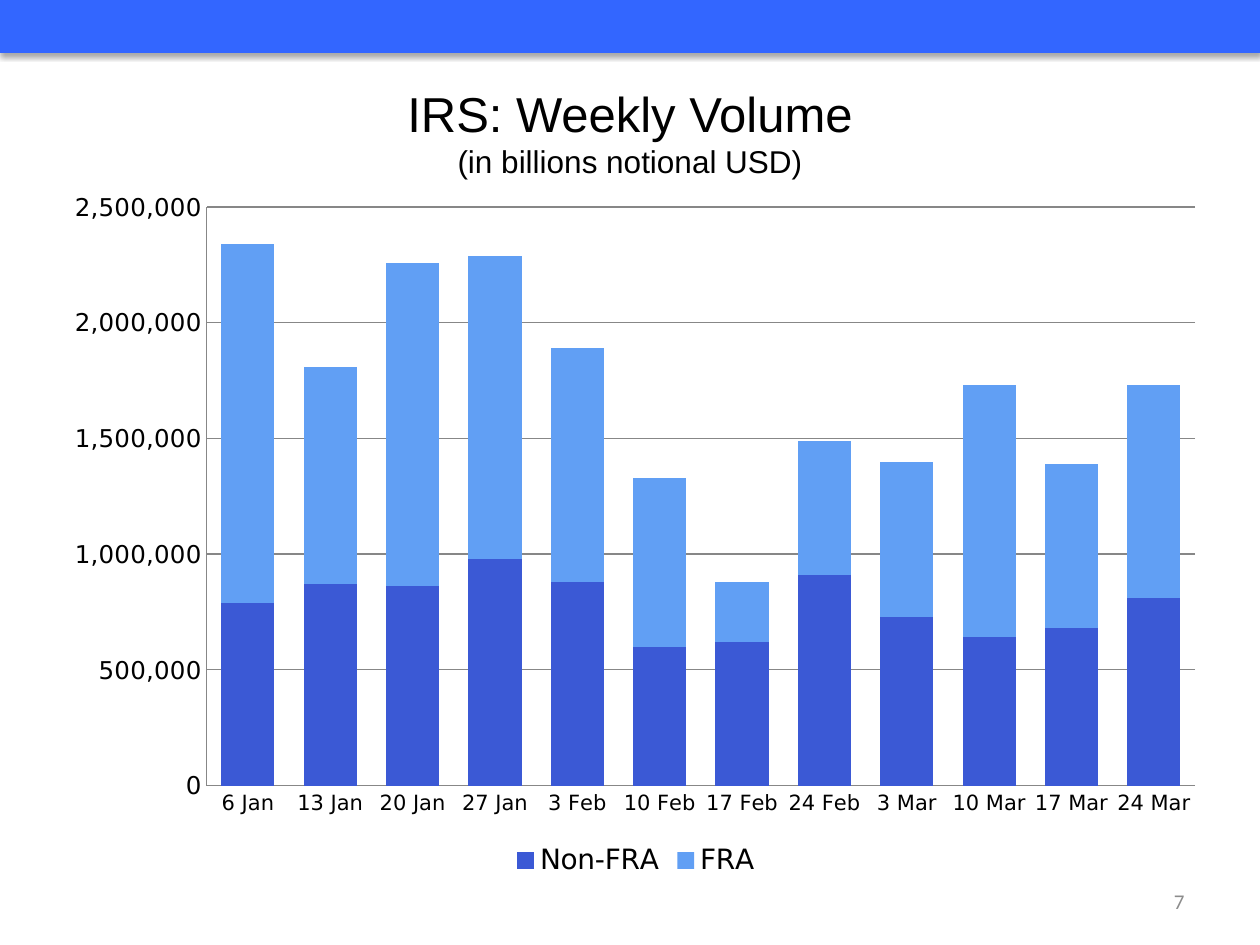
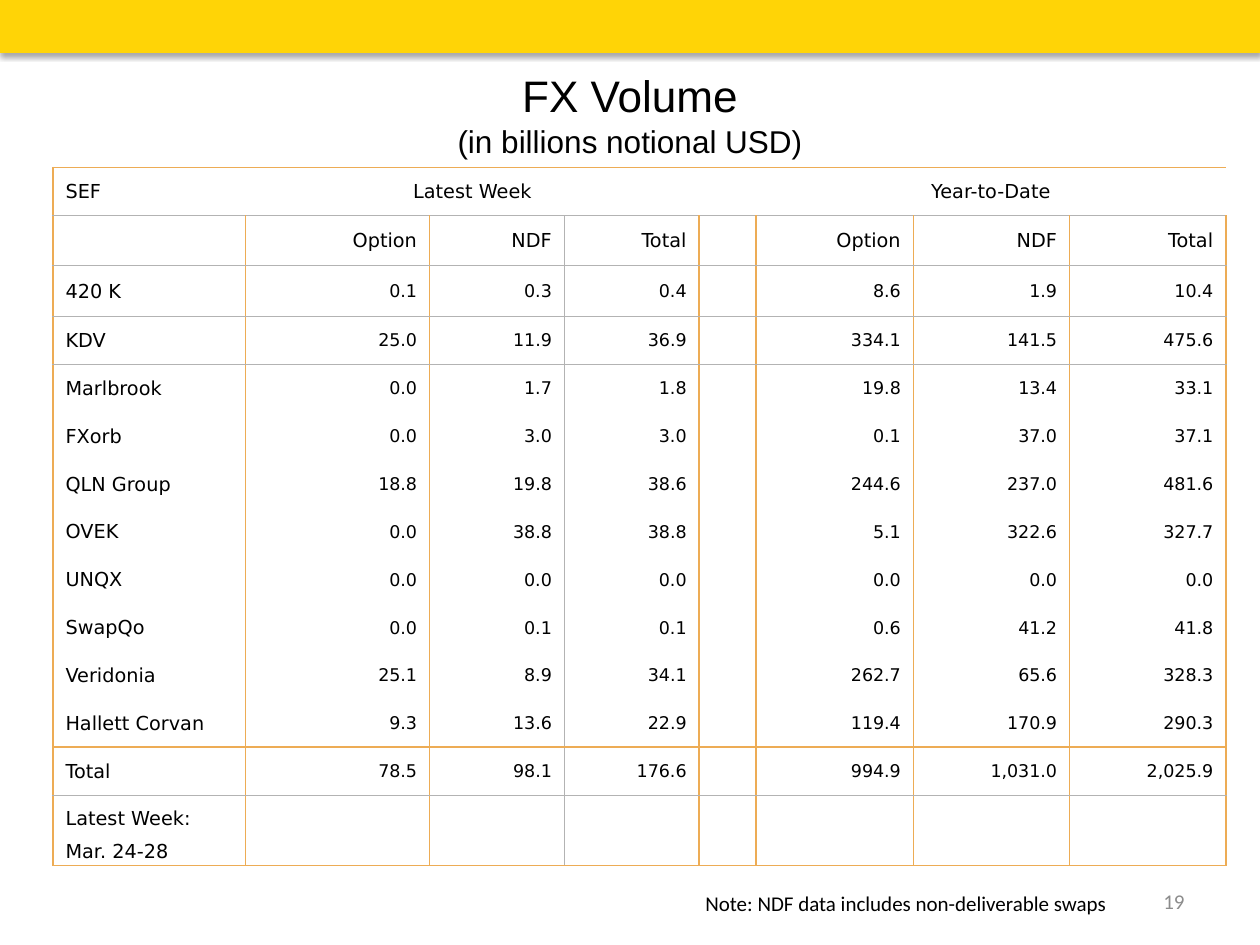
import dataclasses

import lxml.etree
import pptx
import pptx.chart.data
import pptx.dml.color
import pptx.enum.chart
import pptx.enum.shapes
import pptx.enum.text
import pptx.oxml
import pptx.oxml.ns
import pptx.util

Inches, Pt, qn = pptx.util.Inches, pptx.util.Pt, pptx.oxml.ns.qn
RGB = pptx.dml.color.RGBColor.from_string
ALIGN, ANCHOR = pptx.enum.text.PP_ALIGN, pptx.enum.text.MSO_ANCHOR
NS = pptx.oxml.ns.nsdecls("a", "c")
NO_GRID_STYLE = "{2D5ABB26-0587-4C30-8999-92F81FD0307C}"


@dataclasses.dataclass(frozen=True)
class Theme:
    blue: str = "3366FF"
    yellow: str = "FFD406"
    black: str = "000000"
    number_grey: str = "8C8C8C"
    grid_grey: str = "878787"
    rule_orange: str = "EDAC55"
    rule_grey: str = "B3B3B3"
    non_fra: str = "3B59D5"
    fra: str = "619FF4"
    title_font: str = "Arial"
    data_font: str = "DejaVu Sans"
    note_font: str = "Calibri"
    title: float = 28
    title_small: float = 25.2
    subtitle: float = 18
    legend: float = 16
    value_axis: float = 14
    category_axis: float = 12
    note: float = 12
    label: float = 11
    figure: float = 10


T = Theme()


def set_font(font, name, size, color=T.black):
    font.name, font.size, font.bold = name, Pt(size), False
    font.color.rgb = RGB(color)


def write(p, text, *, size, font, color=T.black, align=ALIGN.LEFT,
          after=None, spacing=None):
    """Add one formatted run to a paragraph."""
    r = p.add_run()
    r.text = text
    set_font(r.font, font, size, color)
    p.alignment = align
    if after is not None:
        p.space_after = Pt(after)
    if spacing:
        p.line_spacing = spacing


def set_border(cell, side, color, width):
    """Draw one side (L, R, T or B) of a table cell."""
    tcPr = cell._tc.get_or_add_tcPr()
    line = pptx.oxml.parse_xml(
        f'<a:ln{side} {NS} w="{Pt(width)}"><a:solidFill>'
        f'<a:srgbClr val="{color}"/></a:solidFill></a:ln{side}>')
    # Borders come in a fixed order, ahead of the fill
    order = [qn(f"a:ln{x}") for x in "LRTB"]
    before = order[:order.index(line.tag)]
    tcPr.insert(sum(child.tag in before for child in tcPr), line)


class Deck:
    def __init__(self, theme):
        self.t = theme
        self.prs = pptx.Presentation()
        self.prs.slide_width, self.prs.slide_height = Inches(10), Inches(7.5)
        self.s = None

    def new_slide(self):
        self.s = self.prs.slides.add_slide(self.prs.slide_layouts[6])

    def text_box(self, left, top, width, height):
        tf = self.s.shapes.add_textbox(
            Inches(left), Inches(top), Inches(width), Inches(height)).text_frame
        tf.word_wrap = True
        tf.vertical_anchor = ANCHOR.MIDDLE
        return tf.paragraphs[0]

    def title(self, title, subtitle, top, height, size):
        p = self.text_box(0.5, top, 9, height)
        style = dict(font=self.t.title_font, align=ALIGN.CENTER)
        write(p, title, size=size, **style)
        p.add_line_break()
        write(p, subtitle, size=self.t.subtitle, **style)

    def band(self, color):
        sp = self.s.shapes.add_shape(
            pptx.enum.shapes.MSO_SHAPE.RECTANGLE, 0, 0,
            self.prs.slide_width, Inches(0.42))
        sp.fill.solid()
        sp.fill.fore_color.rgb = RGB(color)
        sp.line.fill.background()
        sp.shadow.inherit = False
        effects = sp._element.spPr.find(qn("a:effectLst"))
        effects.append(pptx.oxml.parse_xml(
            f'<a:outerShdw {NS} blurRad="{Pt(3.1)}" dist="{Pt(1.8)}" '
            'dir="5400000" rotWithShape="0"><a:srgbClr val="000000">'
            '<a:alpha val="35000"/></a:srgbClr></a:outerShdw>'))

    def page_number(self, number):
        write(self.text_box(7.17, 6.95, 2.33, 0.4), str(number),
              size=self.t.note, font=self.t.note_font,
              color=self.t.number_grey, align=ALIGN.RIGHT)

    def note(self, text):
        write(self.text_box(5.5, 6.85, 3.67, 0.64), text,
              size=self.t.note, font=self.t.note_font)

    def stacked_chart(self, categories, series, maximum, step):
        t = self.t
        data = pptx.chart.data.CategoryChartData(number_format="#,##0")
        data.categories = categories
        for name, values, _ in series:
            data.add_series(name, values)
        chart = self.s.shapes.add_chart(
            pptx.enum.chart.XL_CHART_TYPE.COLUMN_STACKED, Inches(0.42),
            Inches(1.42), Inches(9.25), Inches(5.58), data).chart
        set_font(chart.font, t.data_font, t.legend)
        chart.has_title = False

        # Legend and columns
        chart.has_legend = True
        chart.legend.position = pptx.enum.chart.XL_LEGEND_POSITION.BOTTOM
        chart.legend.include_in_layout = False
        set_font(chart.legend.font, t.data_font, t.legend)
        plot = chart.plots[0]
        plot.gap_width, plot.overlap = 55, 100
        plot.vary_by_categories = False
        for column, (_, _, color) in zip(plot.series, series):
            column.format.fill.solid()
            column.format.fill.fore_color.rgb = RGB(color)

        # Axes
        axes = ((chart.category_axis, t.category_axis),
                (chart.value_axis, t.value_axis))
        for axis, size in axes:
            axis.major_tick_mark = pptx.enum.chart.XL_TICK_MARK.NONE
            axis.minor_tick_mark = pptx.enum.chart.XL_TICK_MARK.NONE
            axis.format.line.color.rgb = RGB(t.grid_grey)
            set_font(axis.tick_labels.font, t.data_font, size)
        axis = chart.value_axis
        axis.minimum_scale, axis.maximum_scale = 0, maximum
        axis.major_unit = step
        axis.has_major_gridlines = True
        axis.major_gridlines.format.line.color.rgb = RGB(t.grid_grey)
        axis.tick_labels.number_format = "#,##0"
        axis.tick_labels.number_format_is_linked = False

        # Clear background and fixed plot area
        root = chart._chartSpace
        root.find(qn("c:txPr")).addprevious(pptx.oxml.parse_xml(
            f'<c:spPr {NS}><a:noFill/><a:ln><a:noFill/></a:ln></c:spPr>'))
        area = root.chart.plotArea
        for layout in area.findall(qn("c:layout")):
            area.remove(layout)
        edges = "".join(f'<c:{k} val="{v}"/>' for k, v in (
            ("layoutTarget", "inner"), ("xMode", "edge"), ("yMode", "edge"),
            ("x", 0.132), ("y", 0.04), ("w", 0.848), ("h", 0.823)))
        area.insert(0, pptx.oxml.parse_xml(
            f'<c:layout {NS}><c:manualLayout>{edges}</c:manualLayout></c:layout>'))

    def table(self, rows, widths, heights):
        frame = self.s.shapes.add_table(
            len(rows), len(widths), Inches(0.42), Inches(1.33),
            Inches(sum(widths)), Inches(sum(heights)))
        table = frame.table
        table.first_row = table.horz_banding = False
        table._tbl.tblPr.find(qn("a:tableStyleId")).text = NO_GRID_STYLE
        for column, width in zip(table.columns, widths):
            column.width = Inches(width)
        for row, height in zip(table.rows, heights):
            row.height = Inches(height)
        for i, row in enumerate(rows):
            for j, text in enumerate(row):
                self.cell(table.cell(i, j), text, i, j, len(rows) - 1)
        return table

    def cell(self, cell, text, i, j, last):
        t = self.t
        cell.fill.background()
        cell.vertical_anchor = ANCHOR.TOP if i == last else ANCHOR.MIDDLE
        cell.margin_left = cell.margin_right = Inches(0.1)
        cell.margin_top, cell.margin_bottom = Inches(0.01), 0
        if i == 0:
            align = ALIGN.CENTER if j else ALIGN.LEFT
        else:
            align = ALIGN.RIGHT if j else ALIGN.LEFT
        size = t.figure if j and i > 1 else t.label
        for k, line in enumerate(text.split("\n") if text else []):
            tf = cell.text_frame
            p = tf.add_paragraph() if k else tf.paragraphs[0]
            write(p, line, size=size, font=t.data_font, align=align,
                  after=6 if i == 1 else None,
                  spacing=1.5 if i == last else None)

    def rule_table(self, table, grey_rows, orange_rows, grey_columns):
        """Rule the grid; edges are numbered from the top and the left."""
        orange, grey = (self.t.rule_orange, 1), (self.t.rule_grey, 0.5)
        last_column = len(table.columns) - 1
        for i in range(len(table.rows)):
            for j in range(last_column + 1):
                cell = table.cell(i, j)
                for side, edge in (("L", j), ("R", j + 1)):
                    if i or edge in (0, last_column + 1):
                        set_border(cell, side,
                                   *(grey if edge in grey_columns else orange))
                for side, edge in (("T", i), ("B", i + 1)):
                    if edge in orange_rows:
                        set_border(cell, side, *orange)
                    elif edge in grey_rows:
                        set_border(cell, side, *grey)


WEEKS = ["6 Jan", "13 Jan", "20 Jan", "27 Jan", "3 Feb", "10 Feb", "17 Feb",
         "24 Feb", "3 Mar", "10 Mar", "17 Mar", "24 Mar"]
NON_FRA = [790000, 870000, 860000, 980000, 880000, 600000, 620000, 910000,
           730000, 640000, 680000, 810000]
FRA = [1550000, 940000, 1400000, 1310000, 1010000, 730000, 260000, 580000,
       670000, 1090000, 710000, 920000]

# Name, then option, NDF and total for the week and for the year
FX_VOLUMES = [
    ("420 K", "0.1", "0.3", "0.4", "8.6", "1.9", "10.4"),
    ("KDV", "25.0", "11.9", "36.9", "334.1", "141.5", "475.6"),
    ("Marlbrook", "0.0", "1.7", "1.8", "19.8", "13.4", "33.1"),
    ("FXorb", "0.0", "3.0", "3.0", "0.1", "37.0", "37.1"),
    ("QLN Group", "18.8", "19.8", "38.6", "244.6", "237.0", "481.6"),
    ("OVEK", "0.0", "38.8", "38.8", "5.1", "322.6", "327.7"),
    ("UNQX", "0.0", "0.0", "0.0", "0.0", "0.0", "0.0"),
    ("SwapQo", "0.0", "0.1", "0.1", "0.6", "41.2", "41.8"),
    ("Veridonia", "25.1", "8.9", "34.1", "262.7", "65.6", "328.3"),
    ("Hallett Corvan", "9.3", "13.6", "22.9", "119.4", "170.9", "290.3"),
    ("Total", "78.5", "98.1", "176.6", "994.9", "1,031.0", "2,025.9"),
]
UNITS = "(in billions notional USD)"


def irs_slide(deck):
    deck.new_slide()
    deck.title("IRS: Weekly Volume", UNITS, 0.42, 1.25, T.title)
    deck.stacked_chart(WEEKS, [("Non-FRA", NON_FRA, T.non_fra),
                               ("FRA", FRA, T.fra)], 2500000, 500000)
    deck.band(T.blue)
    deck.page_number(7)


def fx_slide(deck):
    deck.new_slide()
    deck.title("FX Volume", UNITS, 0.47, 0.87, T.title_small)
    measures = ("Option", "NDF", "Total")
    rows = [("SEF", "Latest Week", "", "", "", "Year-to-Date", "", ""),
            ("", *measures, "", *measures)]
    rows += [(*row[:4], "", *row[4:]) for row in FX_VOLUMES]
    rows.append(("Latest Week:\nMar. 24-28", *[""] * 7))
    table = deck.table(rows, [1.53, 1.46, 1.07, 1.07, 0.45, 1.25, 1.24, 1.24],
                       [0.38, 0.4, 0.4] + [0.38] * 10 + [0.55])
    deck.rule_table(table, grey_rows=(1, 2, 3, 13), orange_rows=(0, 12, 14),
                    grey_columns=(3,))
    for first in (1, 5):
        table.cell(0, first).merge(table.cell(0, first + 2))
    deck.band(T.yellow)
    deck.page_number(19)
    deck.note("Note: NDF data includes non-deliverable swaps")


def main():
    deck = Deck(T)
    irs_slide(deck)
    fx_slide(deck)
    deck.prs.save("out.pptx")


if __name__ == "__main__":
    main()
